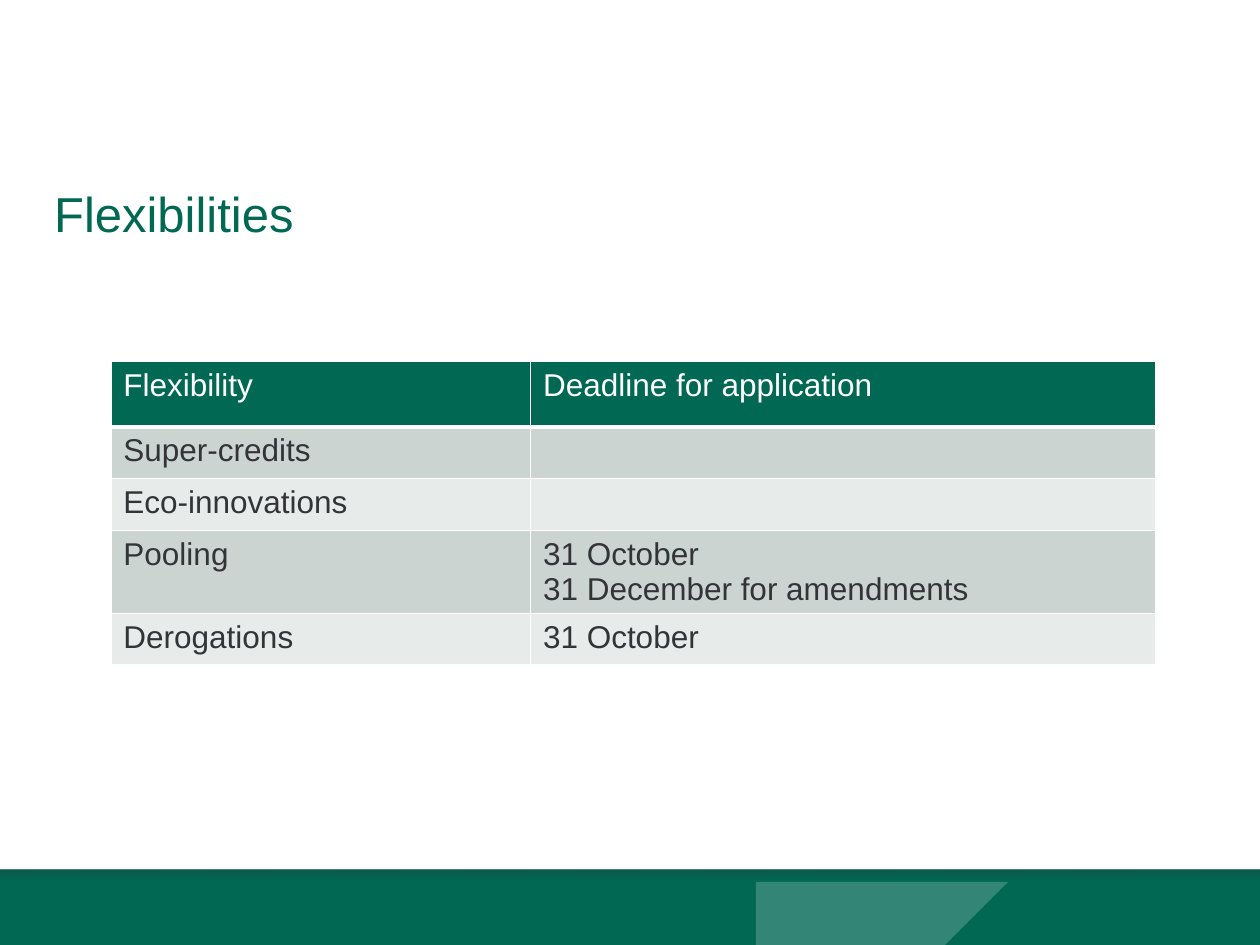
import math

import pptx
import pptx.dml.color
import pptx.enum.shapes
import pptx.enum.text
import pptx.oxml
import pptx.oxml.ns
import pptx.util

Inches = pptx.util.Inches
RGBColor = pptx.dml.color.RGBColor

GREEN = RGBColor(0x00, 0x68, 0x53)
LIGHT_GREEN = RGBColor(0x33, 0x86, 0x75)
DARK = RGBColor(0x32, 0x34, 0x37)
WHITE = RGBColor(0xFF, 0xFF, 0xFF)
BANDS = (RGBColor(0xCC, 0xD4, 0xD1), RGBColor(0xE7, 0xEB, 0xE9))

FOOTER_TOP = 6.9
# Corner x, y and rounding distance
CHEVRON = [(-0.03, 0, 0.06), (0.34, 0, 0.04), (0.54, 0.27, 0.03),
           (0.34, 0.6, 0.04), (-0.03, 0.6, 0.07), (0.17, 0.27, 0)]
CHEVRON_LEFTS = (6.27, 6.72, 7.19)

ROWS = [
    ("Flexibility", "Deadline for application"),
    ("Super-credits", ""),
    ("Eco-innovations", ""),
    ("Pooling", "31 October\n31 December for amendments"),
    ("Derogations", "31 October"),
]


def rounded(corners, steps=4):
    """Return the outline's points with each corner replaced by a short curve."""
    points = []
    for i, (x, y, distance) in enumerate(corners):
        ends = []
        for near_x, near_y, _ in (corners[i - 1], corners[(i + 1) % len(corners)]):
            share = distance / math.hypot(near_x - x, near_y - y)
            ends.append((x + share * (near_x - x), y + share * (near_y - y)))
        (ax, ay), (bx, by) = ends
        for t in [step / steps for step in range(steps + 1)] if distance else [0]:
            points.append(((1 - t) ** 2 * ax + 2 * t * (1 - t) * x + t * t * bx,
                           (1 - t) ** 2 * ay + 2 * t * (1 - t) * y + t * t * by))
    return points


class SlideBuilder:
    font_name = "Arial"

    def __init__(self, page):
        self.page = page

    def format_text(self, frame, size, color):
        values = {"name": self.font_name, "size": pptx.util.Pt(size), "bold": False}
        for para in frame.paragraphs:
            for font in [para.font] + [span.font for span in para.runs]:
                for name, value in values.items():
                    setattr(font, name, value)
                font.color.rgb = color

    def fill_plain(self, shape, color):
        shape.shadow.inherit = False
        shape.fill.solid()
        shape.fill.fore_color.rgb = color
        shape.line.fill.background()

    def band(self, top, height, color):
        shape = self.page.shapes.add_shape(
            pptx.enum.shapes.MSO_SHAPE.RECTANGLE,
            0, Inches(top), Inches(10), Inches(height))
        self.fill_plain(shape, color)
        return shape

    def fade(self, top, height, color, opacity):
        """Draw a band that fades out downwards."""
        shape = self.band(top, height, color)
        shape.fill.gradient()
        shape.fill.gradient_angle = 270
        for stop, alpha in zip(shape.fill.gradient_stops, (opacity, 0)):
            stop.color.rgb = color
        for node, alpha in zip(shape._element.spPr.iter(pptx.oxml.ns.qn("a:srgbClr")),
                               (opacity, 0)):
            node.append(pptx.oxml.parse_xml(
                f'<a:alpha {pptx.oxml.ns.nsdecls("a")} val="{alpha * 1000}"/>'))

    def chevrons(self, lefts, top, color):
        outline = rounded(CHEVRON)
        builder = None
        for left in lefts:
            points = [(left + x, top + y) for x, y in outline]
            if builder is None:
                builder = self.page.shapes.build_freeform(*points[0], scale=Inches(1))
            else:
                builder.move_to(*points[0])
            builder.add_line_segments(points[1:], close=True)
        self.fill_plain(builder.convert_to_shape(), color)

    def title(self, text, left, top, width, height):
        box = self.page.shapes.title
        for name, value in {"left": left, "top": top,
                            "width": width, "height": height}.items():
            setattr(box, name, Inches(value))
        frame = box.text_frame
        frame.text = text
        frame.vertical_anchor = pptx.enum.text.MSO_ANCHOR.TOP
        frame.paragraphs[0].alignment = pptx.enum.text.PP_ALIGN.LEFT
        frame.paragraphs[0].line_spacing = 0.9
        self.format_text(frame, 28, GREEN)

    def border(self, cell, color, widths):
        """Add cell borders; they must come before the fill."""
        properties = cell._tc.get_or_add_tcPr()
        for index, (side, width) in enumerate(widths.items()):
            properties.insert(index, pptx.oxml.parse_xml(
                f'<a:ln{side} {pptx.oxml.ns.nsdecls("a")} w="{pptx.util.Pt(width)}">'
                f'<a:solidFill><a:srgbClr val="{color}"/></a:solidFill></a:ln{side}>'))

    def table(self, rows, left, top, widths, heights):
        table = self.page.shapes.add_table(
            len(rows), len(widths), Inches(left), Inches(top),
            Inches(sum(widths)), Inches(sum(heights))).table
        for column, width in zip(table.columns, widths):
            column.width = Inches(width)
        for r, (row, height) in enumerate(zip(rows, heights)):
            table.rows[r].height = Inches(height)
            header = r == 0
            for c, text in enumerate(row):
                cell = table.cell(r, c)
                cell.text = text
                self.format_text(cell.text_frame, 18, WHITE if header else DARK)
                cell.fill.solid()
                cell.fill.fore_color.rgb = GREEN if header else BANDS[(r - 1) % 2]
                self.border(cell, WHITE, {"L": 1, "R": 1, "T": 1,
                                          "B": 3 if header else 1})


def main():
    deck = pptx.Presentation()
    deck.slide_width, deck.slide_height = Inches(10), Inches(7.5)
    page = deck.slides.add_slide(deck.slide_layouts[5])
    builder = SlideBuilder(page)
    builder.band(FOOTER_TOP, 0.6, GREEN)
    builder.chevrons(CHEVRON_LEFTS, FOOTER_TOP, LIGHT_GREEN)
    builder.fade(FOOTER_TOP, 0.08, DARK, 30)
    builder.title("Flexibilities", 0.33, 1.46, 9.45, 0.77)
    builder.table(ROWS, 0.88, 2.87, (3.33, 4.96), (0.52, 0.41, 0.41, 0.65, 0.41))
    deck.save("out.pptx")


if __name__ == "__main__":
    main()
